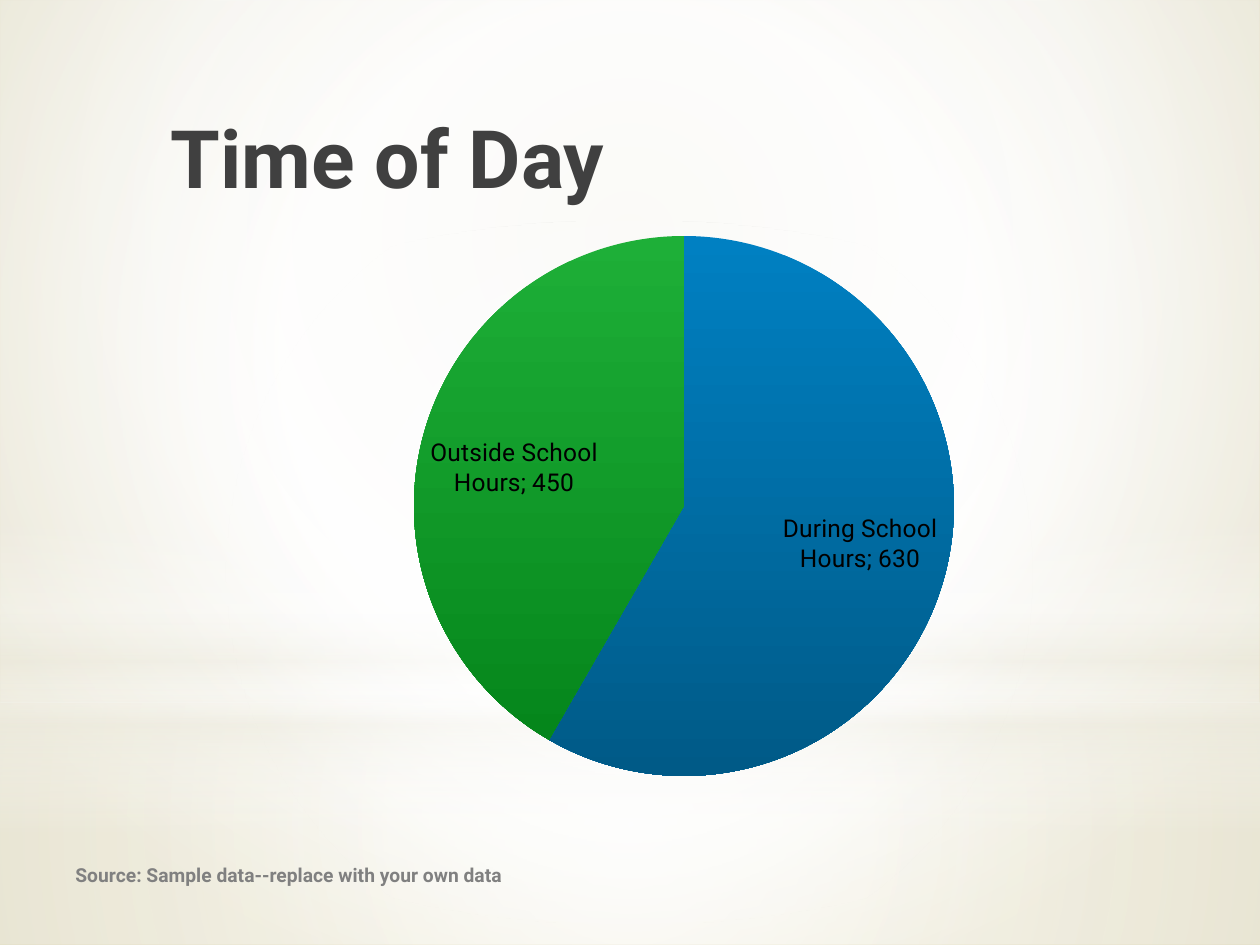
from dataclasses import dataclass

from lxml.etree import SubElement as Sub
from pptx import Presentation
from pptx.chart.data import CategoryChartData as ChartData
from pptx.dml.color import RGBColor as Rgb
from pptx.enum.chart import XL_CHART_TYPE as Kind, XL_LABEL_POSITION as Spot
from pptx.enum.shapes import MSO_SHAPE as Form
from pptx.enum.text import MSO_ANCHOR as Anchor
from pptx.oxml.ns import qn
from pptx.util import Pt

PX = 914400 / 126
WIDE, HIGH = 1260, 945
MID = (50, 50, 50, 50)


@dataclass(frozen=True)
class Theme:
    font: str = "Roboto"
    title: str = "404040"
    note: str = "808080"
    label: str = "000000"
    white: str = "FFFFFF"
    cream: str = "EEECE1"
    sand: str = "E7E4D4"
    tan: str = "D5CC9F"
    slices: tuple = (("0080C2", "005A87"), ("1EAF38", "05861B"))
    title_pt: int = 46
    label_pt: int = 14
    note_pt: int = 11


T = Theme()


def emu(*sizes):
    return [round(size * PX) for size in sizes]


def blend(owner, stops, focus=None):
    """Swap a solid fill for (place, colour, opacity) stops, round a focus or downward."""
    grad = owner.makeelement(qn("a:gradFill"), {"rotWithShape": "1"})
    row = Sub(grad, qn("a:gsLst"))
    for place, color, alpha in stops:
        stop = Sub(row, qn("a:gs"), pos=str(place * 1000))
        tint = Sub(stop, qn("a:srgbClr"), val=color)
        if alpha < 100:
            Sub(tint, qn("a:alpha"), val=str(alpha * 1000))
    if focus:
        path = Sub(grad, qn("a:path"), {"path": "circle"})
        edges = {side: str(part * 1000) for side, part in zip("ltrb", focus)}
        Sub(path, qn("a:fillToRect"), edges)
    else:
        Sub(grad, qn("a:lin"), ang="5400000", scaled="0")
    owner.replace(owner.find(qn("a:solidFill")), grad)


def glow(slide, form, box, stops, focus=None):
    """Add a soft, lineless layer of the backdrop."""
    shape = slide.shapes.add_shape(form, *emu(*box))
    shape.shadow.inherit = False
    shape.line.fill.background()
    shape.fill.solid()
    blend(shape.element.spPr, stops, focus)


def backdrop(slide, wide, high):
    slide.background.fill.solid()
    base = [(0, T.sand, 100), (60, T.white, 100), (100, T.tan, 100)]
    blend(slide.element.find(".//" + qn("p:bgPr")), base, (20, 10, 20, 60))
    edge = 703
    floor = [(0, T.white, 91), (37, T.white, 76), (100, T.cream, 79)]
    wall = [(0, T.white, 83), (48, T.white, 83), (100, T.cream, 83)]
    seam = [(0, T.white, 0), (29, T.white, 30), (45, T.cream, 40),
            (55, T.white, 26), (65, T.cream, 60), (100, T.white, 0)]
    light = [(0, T.white, 100), (56, T.white, 0)]
    glow(slide, Form.RECTANGLE, (0, edge, wide, high - edge), floor, MID)
    glow(slide, Form.RECTANGLE, (0, 0, wide, edge), wall, MID)
    glow(slide, Form.RECTANGLE, (0, 519, wide, 315), seam)
    glow(slide, Form.OVAL, (0, 221, wide, edge), light, MID)


def style(font, size, color, bold=False):
    font.name, font.size, font.bold = T.font, Pt(size), bold
    font.color.rgb = Rgb.from_string(color)


def words(slide, box, text, size, color, anchor):
    frame = slide.shapes.add_textbox(*emu(*box)).text_frame
    frame.word_wrap = True
    frame.vertical_anchor = anchor
    frame.text = text
    style(frame.paragraphs[0].runs[0].font, size, color, True)


def place(chart, box, pie):
    """Fix the pie's square inside the chart's box."""
    left, top, wide, high = box
    x, y, side = pie
    area = chart.element.find(".//" + qn("c:plotArea"))
    old = area.find(qn("c:layout"))
    if old is not None:
        area.remove(old)
    layout = area.makeelement(qn("c:layout"), {})
    area.insert(0, layout)
    manual = Sub(layout, qn("c:manualLayout"))
    rules = {"layoutTarget": "inner", "xMode": "edge", "yMode": "edge",
             "x": x / wide, "y": y / high, "w": side / wide, "h": side / high}
    for name, value in rules.items():
        Sub(manual, qn("c:" + name), val=str(value))


def pie(slide, box):
    data = ChartData()
    data.categories = ["During School Hours", "Outside School Hours"]
    data.add_series("Series 1", (630, 450))
    chart = slide.shapes.add_chart(Kind.PIE, *emu(*box), data).chart
    chart.has_title = chart.has_legend = False
    style(chart.font, 18, T.label)
    place(chart, box, (256, 17, 540))
    plot = chart.plots[0]
    plot.vary_by_categories = True
    for index, tones in enumerate(T.slices):
        form = plot.series[0].points[index].format
        form.line.fill.background()
        form.fill.gradient()
        form.fill.gradient_angle = 270
        for stop, tone in zip(form.fill.gradient_stops, tones):
            stop.color.rgb = Rgb.from_string(tone)
    plot.has_data_labels = True
    labels = plot.data_labels
    labels.show_category_name = labels.show_value = True
    labels.show_percentage = False
    labels.position = Spot.INSIDE_END
    style(labels.font, T.label_pt, T.label)


def main():
    deck = Presentation()
    deck.slide_width, deck.slide_height = emu(WIDE, HIGH)
    slide = deck.slides.add_slide(deck.slide_layouts[6])
    backdrop(slide, WIDE, HIGH)
    words(slide, (158, 102, 897, 158), "Time of Day",
          T.title_pt, T.title, Anchor.TOP)
    pie(slide, (158, 219, 882, 575))
    words(slide, (63, 850, 766, 50),
          "Source: Sample data--replace with your own data",
          T.note_pt, T.note, Anchor.MIDDLE)
    deck.save("out.pptx")


if __name__ == "__main__":
    main()
